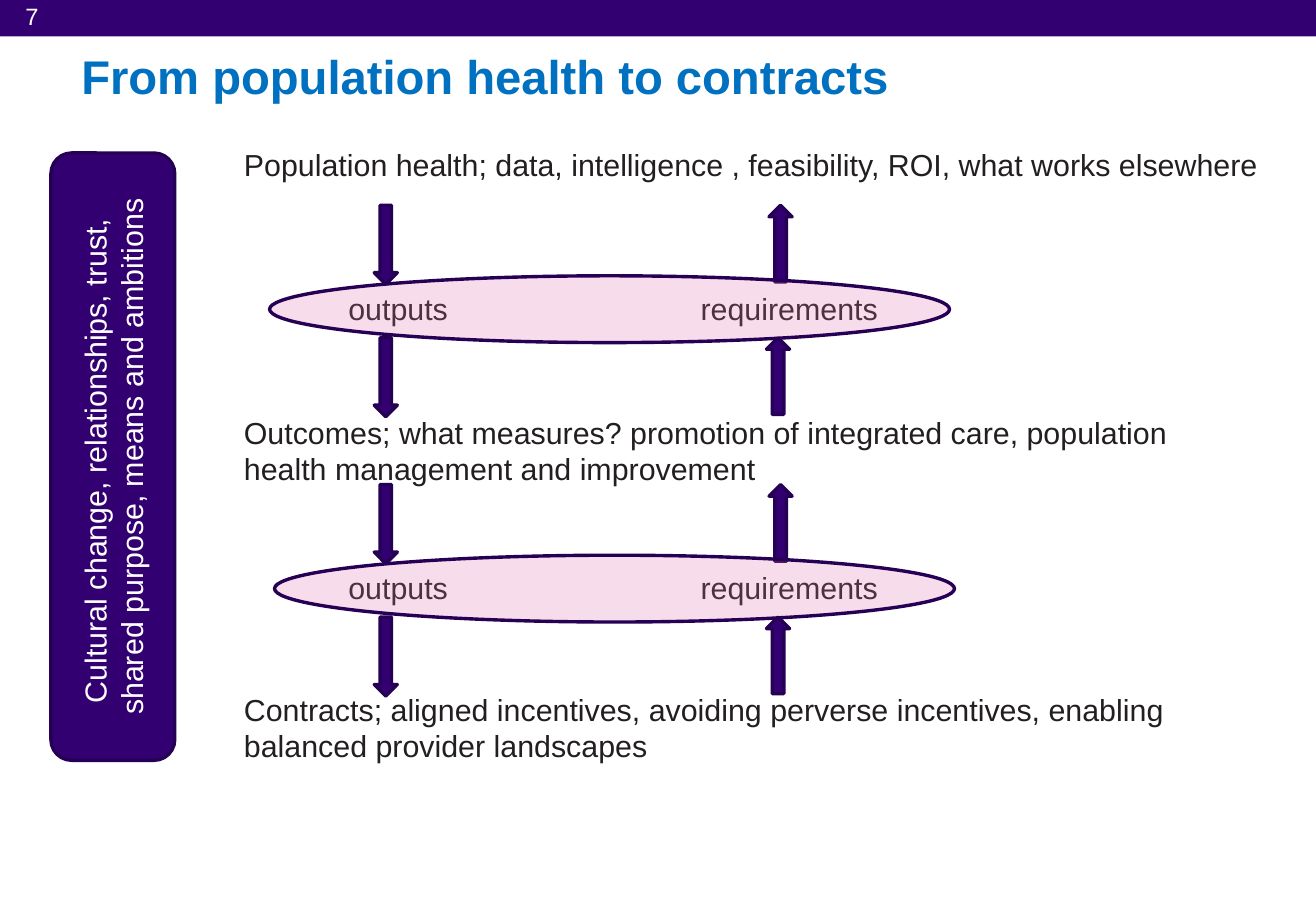
import pptx
import pptx.dml.color
import pptx.enum.shapes
import pptx.enum.text
import pptx.oxml
import pptx.oxml.ns
import pptx.util

Pt = pptx.util.Pt
SHAPES = pptx.enum.shapes.MSO_SHAPE
ANCHOR = pptx.enum.text.MSO_ANCHOR
ALIGN = pptx.enum.text.PP_ALIGN

PURPLE, OUTLINE, PINK = "330072", "260054", "E06BAD"
BLUE, INK, WHITE = "0070C0", "231F20", "FFFFFF"


def color(value):
    return pptx.dml.color.RGBColor.from_string(value)


def write(frame, lines, size, ink, align=ALIGN.LEFT, bold=False):
    frame.text = "\n".join(lines)
    for para in frame.paragraphs:
        para.alignment = align
        para.font.name = "Arial"
        para.font.size = Pt(size)
        para.font.bold = bold
        para.font.color.rgb = color(ink)


def add_text(page, box, text, size=18, ink=INK, wrap=True):
    frame = page.shapes.add_textbox(*map(Pt, box)).text_frame
    frame.word_wrap = wrap
    write(frame, [text], size, ink)


def add_figure(page, kind, box, fill=PURPLE, line=OUTLINE):
    figure = page.shapes.add_shape(kind, *map(Pt, box))
    figure.shadow.inherit = False
    figure.fill.solid()
    figure.fill.fore_color.rgb = color(fill)
    if line:
        figure.line.color.rgb = color(line)
        figure.line.width = Pt(2)
    else:
        figure.line.fill.background()
    return figure


def add_header(page, left, top, width):
    add_figure(page, SHAPES.RECTANGLE, (left, top, width, 21.6), line=None)
    add_text(page, (left + 8, top - 2.2, 40, 24.5), "7", 14, WHITE)
    title = page.shapes.title
    title.left, title.top = Pt(left + 41), Pt(top + 24.5)
    title.width, title.height = Pt(638), Pt(41)
    title.text_frame.vertical_anchor = ANCHOR.TOP
    write(title.text_frame, ["From population health to contracts"], 28, BLUE, bold=True)


def add_exchange(page, left, top, ellipse_shift):
    add_text(page, (left + 39.6, top + 46.8, 74, 29), "outputs", wrap=False)
    add_text(page, (left + 248.4, top + 46.8, 120, 29), "requirements", wrap=False)
    for drop, up_left in ((0, 296), (78.5, 294.5)):
        add_figure(page, SHAPES.DOWN_ARROW, (left + 62, top + drop, 13.7, 46.8))
        add_figure(page, SHAPES.UP_ARROW, (left + up_left, top + drop, 13.7, 45.4))
    ellipse = add_figure(
        page, SHAPES.OVAL, (left + ellipse_shift, top + 41.8, 403, 39.6), PINK
    )
    tint = ellipse.fill._xPr.find(".//" + pptx.oxml.ns.qn("a:srgbClr"))
    alpha = pptx.oxml.parse_xml(
        f'<a:alpha {pptx.oxml.ns.nsdecls("a")} val="23000"/>'
    )
    tint.append(alpha)


def add_flow(page, left, top):
    levels = (
        (0, 619, 29, "Population health; data, intelligence , feasibility, ROI, what works elsewhere"),
        (159, 612, 51, "Outcomes; what measures? promotion of integrated care, population health management and improvement"),
        (323.3, 612, 51, "Contracts; aligned incentives, avoiding perverse incentives, enabling balanced provider landscapes"),
    )
    for drop, width, height, text in levels:
        add_text(page, (left, top + drop, width, height), text)
    for index, ellipse_shift in enumerate((0, 2.9)):
        add_exchange(page, left + 22.3, top + 38.9 + 165.6 * index, ellipse_shift)


def add_culture_bar(page, left, top, width, height):
    bar = add_figure(page, SHAPES.ROUNDED_RECTANGLE, (left, top, width, height))
    frame = bar.text_frame
    frame.word_wrap = True
    frame.vertical_anchor = ANCHOR.MIDDLE
    frame._txBody.bodyPr.set("vert", "vert270")
    lines = [
        "Cultural change, relationships, trust, ",
        "shared purpose, means and ambitions",
    ]
    write(frame, lines, 18, WHITE, ALIGN.CENTER)


def main():
    deck = pptx.Presentation()
    deck.slide_width, deck.slide_height = Pt(780), Pt(540)
    page = deck.slides.add_slide(deck.slide_layouts.get_by_name("Title Only"))
    add_header(page, 0, 0, 780)
    add_flow(page, 137.5, 82.8)
    add_culture_bar(page, 30.2, 90.7, 73.4, 360)
    deck.save("out.pptx")


if __name__ == "__main__":
    main()
